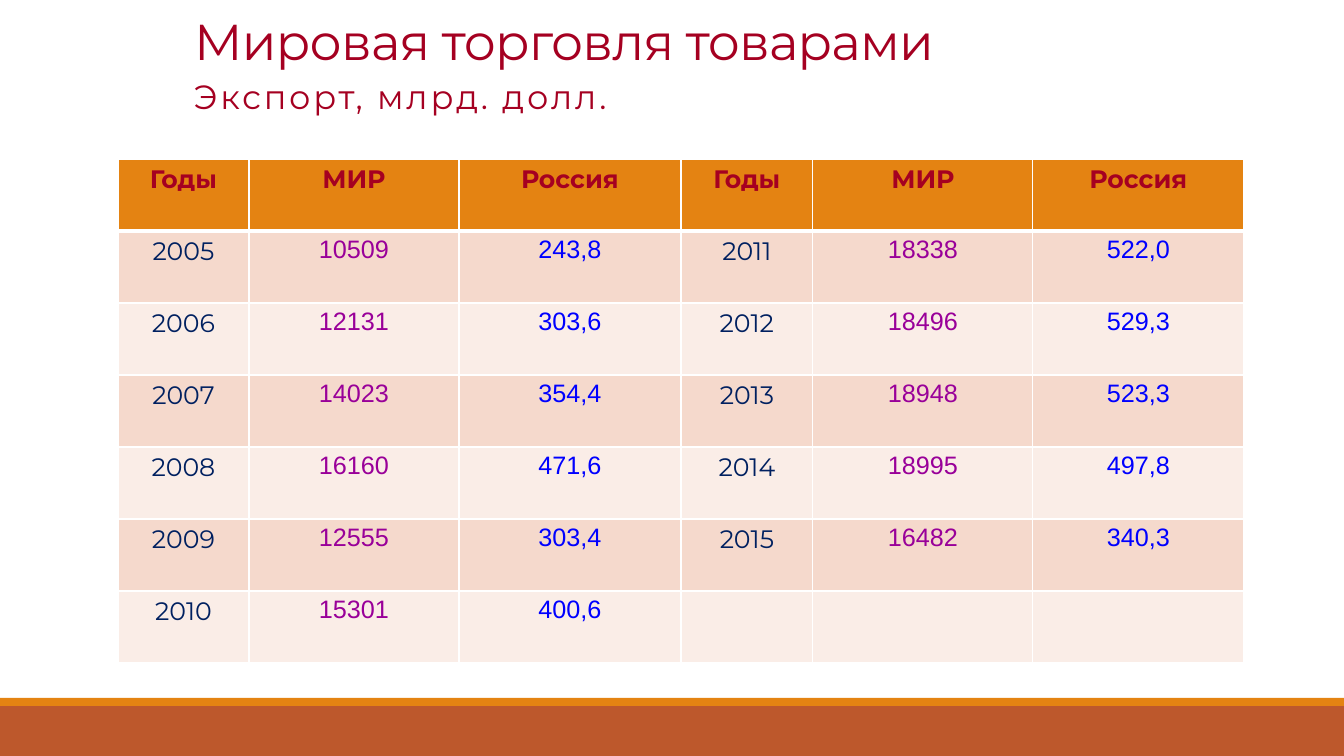
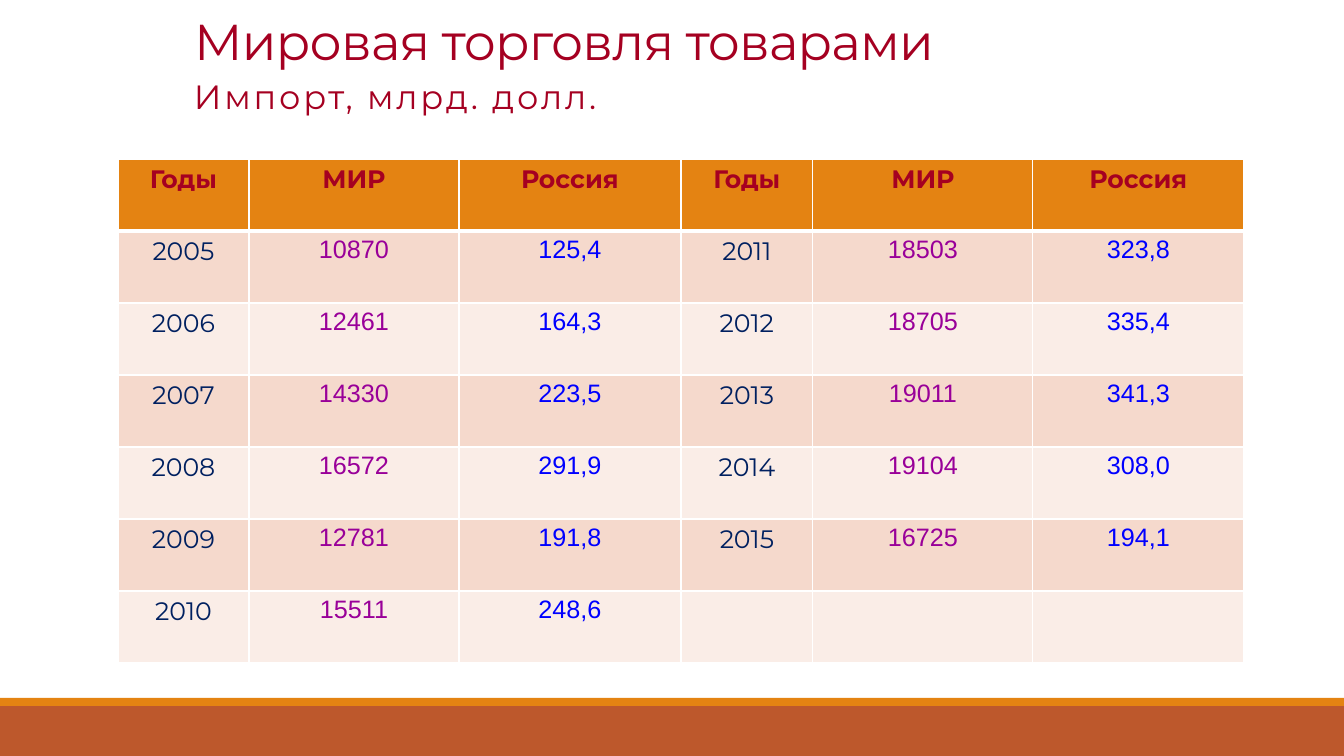
from pptx import Presentation
from pptx.dml.color import RGBColor
from pptx.enum.shapes import MSO_SHAPE
from pptx.enum.text import MSO_ANCHOR, MSO_AUTO_SIZE, PP_ALIGN
from pptx.oxml import parse_xml
from pptx.oxml.ns import nsdecls
from pptx.util import Pt

PX = 12192000 / 1344  # EMU in one px

CRIMSON = RGBColor(0xA5, 0x00, 0x21)
ORANGE = RGBColor(0xE4, 0x83, 0x12)
RUST = RGBColor(0xBD, 0x58, 0x2C)
NAVY = RGBColor(0x00, 0x20, 0x60)
PURPLE = RGBColor(0x99, 0x00, 0x99)
BLUE = RGBColor(0x00, 0x00, 0xFF)
ROW_DARK = RGBColor(0xF5, 0xD9, 0xCC)
ROW_LIGHT = RGBColor(0xFA, 0xED, 0xE7)
WHITE = RGBColor(0xFF, 0xFF, 0xFF)

FONT = "Montserrat"
TITLE = "Мировая торговля товарами"
HEADER = ["Годы", "МИР", "Россия"] * 2
COLUMN_WIDTHS = [131, 210, 222, 132, 220, 211]
ROW_HEIGHT = 72
# Font and colour of the year, world and Russia columns
COLUMN_STYLES = [(FONT, NAVY), ("Arial", PURPLE), ("Arial", BLUE)] * 2
# Left, top, width, height and colour of the bottom bands
BANDS = [(0, 706, 1344, 50, RUST), (0, 698, 1344, 8, ORANGE)]

TRADE = {
    "Экспорт, млрд. долл.": [
        ["2005", "10509", "243,8", "2011", "18338", "522,0"],
        ["2006", "12131", "303,6", "2012", "18496", "529,3"],
        ["2007", "14023", "354,4", "2013", "18948", "523,3"],
        ["2008", "16160", "471,6", "2014", "18995", "497,8"],
        ["2009", "12555", "303,4", "2015", "16482", "340,3"],
        ["2010", "15301", "400,6", "", "", ""],
    ],
    "Импорт, млрд. долл.": [
        ["2005", "10870", "125,4", "2011", "18503", "323,8"],
        ["2006", "12461", "164,3", "2012", "18705", "335,4"],
        ["2007", "14330", "223,5", "2013", "19011", "341,3"],
        ["2008", "16572", "291,9", "2014", "19104", "308,0"],
        ["2009", "12781", "191,8", "2015", "16725", "194,1"],
        ["2010", "15511", "248,6", "", "", ""],
    ],
}


def px(*lengths):
    return [round(length * PX) for length in lengths]


def write_heading(shape, text, size, tracking, line_spacing, anchor):
    frame = shape.text_frame
    frame.text = text
    frame.word_wrap = True
    frame.auto_size = MSO_AUTO_SIZE.NONE
    frame.vertical_anchor = anchor
    paragraph = frame.paragraphs[0]
    paragraph.alignment = PP_ALIGN.LEFT
    paragraph.line_spacing = line_spacing
    run = paragraph.runs[0]
    run.font.name = FONT
    run.font.size = Pt(size)
    run.font.color.rgb = CRIMSON
    run.font._element.set("spc", str(tracking))


prs = Presentation()
prs.slide_width, prs.slide_height = px(1344, 756)
title_only = prs.slide_layouts[5]

for subtitle, records in TRADE.items():
    slide = prs.slides.add_slide(title_only)

    # Bottom bands
    for *box, color in BANDS:
        band = slide.shapes.add_shape(MSO_SHAPE.RECTANGLE, *px(*box))
        band.shadow.inherit = False
        band.fill.solid()
        band.fill.fore_color.rgb = color
        band.line.fill.background()

    # Title and subtitle
    title = slide.shapes.title
    title.left, title.top, title.width, title.height = px(184, 0, 994, 76)
    write_heading(title, TITLE, 36, -50, 0.85, MSO_ANCHOR.BOTTOM)
    measure = slide.shapes.add_textbox(*px(184, 76, 991, 50))
    write_heading(measure, subtitle, 24, 200, 0.9, MSO_ANCHOR.TOP)

    # Trade table
    rows = [HEADER] + records
    table = slide.shapes.add_table(
        len(rows), len(HEADER),
        *px(118, 159, sum(COLUMN_WIDTHS), ROW_HEIGHT * len(rows))).table
    for column, width in zip(table.columns, COLUMN_WIDTHS):
        column.width = px(width)[0]

    for r, values in enumerate(rows):
        is_header = r == 0
        row_fill = ORANGE if is_header else ROW_DARK if r % 2 else ROW_LIGHT
        for c, value in enumerate(values):
            cell = table.cell(r, c)

            # White borders, thicker under the header
            for side in "LRTB":
                thick = (r, side) in [(0, "B"), (1, "T")]
                cell._tc.get_or_add_tcPr().append(parse_xml(
                    f'<a:ln{side} {nsdecls("a")} w="{Pt(3 if thick else 1)}">'
                    f'<a:solidFill><a:srgbClr val="{WHITE}"/></a:solidFill>'
                    f'</a:ln{side}>'))
            cell.fill.solid()
            cell.fill.fore_color.rgb = row_fill

            if not value:
                continue
            cell.text_frame.text = value
            paragraph = cell.text_frame.paragraphs[0]
            paragraph.alignment = PP_ALIGN.CENTER
            font = paragraph.runs[0].font
            font.name, font.color.rgb = (
                (FONT, CRIMSON) if is_header else COLUMN_STYLES[c])
            font.size = Pt(18)
            font.bold = is_header

prs.save("out.pptx")
